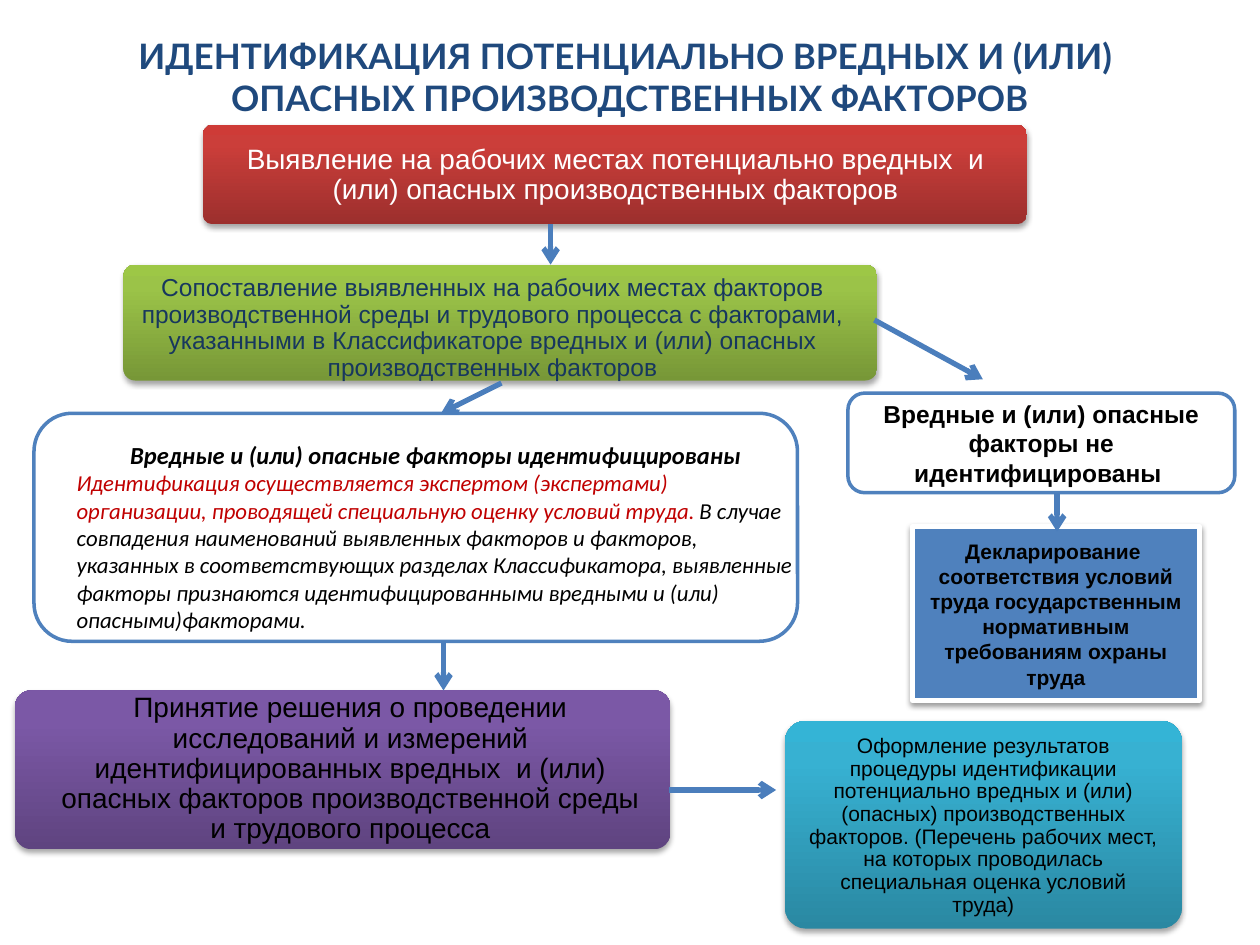
from lxml.etree import SubElement
from pptx import Presentation
from pptx.dml.color import RGBColor
from pptx.enum.shapes import MSO_CONNECTOR, MSO_SHAPE
from pptx.enum.text import MSO_ANCHOR, PP_ALIGN
from pptx.oxml.ns import qn
from pptx.util import Inches, Pt

COLUMNS, ROWS = 100, 75
WIDTH, HEIGHT = Inches(10), Inches(7.5)
BLUE, ARROW_BLUE = "4F81BD", "4B7EBC"
INSET = (1, 0.5, 1, 0.5)

CARDS = [
    {"box": (16.1, 9.9, 65.4, 7.9), "label": (16.9, 10.2, 63.9, 7.4), "inset": 0.7,
     "stops": ("9C2F2D", "CB3E3A", "CE3B37"), "size": 16, "color": "FFFFFF",
     "text": "Выявление на рабочих местах потенциально вредных  и (или) опасных "
             "производственных факторов"},
    {"box": (9.8, 21, 59.8, 9.2), "label": (9.8, 21.8, 58.6, 8.6), "inset": 0.6,
     "stops": ("779737", "9BC348", "9DC746"), "size": 14, "color": "17375E",
     "text": "Сопоставление выявленных на рабочих местах факторов производственной среды "
             "и трудового процесса с факторами, указанными в Классификаторе вредных и "
             "(или) опасных производственных факторов"},
    {"box": (62.3, 57.2, 31.5, 16.5), "label": (63.2, 57.7, 29.7, 15.7), "inset": 1,
     "stops": ("2A88A2", "37B1D2", "34B4D6"), "size": 12, "color": "000000",
     "text": "Оформление результатов процедуры идентификации потенциально вредных и (или) "
             "(опасных) производственных факторов. (Перечень рабочих мест, на которых "
             "проводилась специальная оценка условий труда)"},
    {"box": (1.2, 54.8, 52, 12.6), "label": (3.2, 55.1, 49.2, 11.9), "inset": 0.8,
     "stops": ("5F4480", "7B58A6", "7C57A8"), "size": 16, "color": "000000",
     "text": "Принятие решения о проведении исследований и измерений идентифицированных "
             "вредных  и (или) опасных факторов производственной среды и трудового процесса"},
]

ARROWS = [
    (43.7, 17.8, 43.7, 21),
    (39.8, 30.4, 35, 32.8),
    (69.4, 25.4, 78, 30.1),
    (83.9, 39.1, 83.9, 42.2),
    (35.2, 50.9, 35.2, 54.8),
    (53.1, 62.7, 61.6, 62.7),
]


def rgb(value):
    """Turn a hex string into a colour."""
    return RGBColor.from_string(value)


def place(box):
    """Turn grid columns and rows into slide lengths."""
    steps = (WIDTH / COLUMNS, HEIGHT / ROWS) * 2
    return [round(value * step) for value, step in zip(box, steps)]


def set_frame(shape, inset=INSET, anchor=MSO_ANCHOR.MIDDLE):
    """Set margins, wrapping and anchor, and return the text frame."""
    left, top, right, bottom = place(inset)
    values = {"margin_left": left, "margin_top": top, "margin_right": right,
              "margin_bottom": bottom, "word_wrap": True, "vertical_anchor": anchor}
    for name, value in values.items():
        setattr(shape.text_frame, name, value)
    return shape.text_frame


def add_span(para, text, color, **values):
    """Add formatted text to a paragraph."""
    span = para.add_run()
    span.text = text
    span.font.color.rgb = rgb(color)
    for name, value in values.items():
        setattr(span.font, name, value)


def add_box(shapes, kind, box, fill=None, line=None, width=2):
    """Add a preset shape with a plain fill and outline."""
    shape = shapes.add_shape(kind, *place(box))
    shape.shadow.inherit = False
    if fill:
        shape.fill.solid()
        shape.fill.fore_color.rgb = rgb(fill)
    if line:
        shape.line.color.rgb = rgb(line)
        shape.line.width = Pt(width)
    else:
        shape.line.fill.background()
    return shape


def add_gradient(shape, colors):
    """Fill a shape from bottom to top with three colours."""
    shape.fill.gradient()
    gradient = shape._element.spPr.find(qn("a:gradFill"))
    stops = gradient.find(qn("a:gsLst"))
    for stop in list(stops):
        stops.remove(stop)
    for position, color in zip((0, 80000, 100000), colors):
        stop = SubElement(stops, qn("a:gs"), pos=str(position))
        SubElement(stop, qn("a:srgbClr"), val=color)
    gradient.find(qn("a:lin")).set("ang", "16200000")


def add_shadow(shape, opacity, distance):
    """Drop a soft black shadow below a shape."""
    effects = shape._element.spPr.find(qn("a:effectLst"))
    shadow = SubElement(effects, qn("a:outerShdw"), blurRad=str(Pt(3.1)),
                        dist=str(Pt(distance)), dir="5400000", rotWithShape="0")
    color = SubElement(shadow, qn("a:srgbClr"), val="000000")
    SubElement(color, qn("a:alpha"), val=str(opacity * 1000))


def add_title(page, box):
    """Place the two-line heading."""
    frame = set_frame(page.shapes.add_textbox(*place(box)), (0, 0, 0, 0))
    frame.word_wrap = False
    para = frame.paragraphs[0]
    para.alignment = PP_ALIGN.CENTER
    style = {"name": "Lato", "size": Pt(20), "bold": True}
    add_span(para, "ИДЕНТИФИКАЦИЯ ПОТЕНЦИАЛЬНО ВРЕДНЫХ И (ИЛИ) ", "1F497D", **style)
    para.add_line_break()
    add_span(para, "ОПАСНЫХ ПРОИЗВОДСТВЕННЫХ ФАКТОРОВ", "1F497D", **style)


def add_card(page, box, label, inset, stops, size, color, text):
    """Place a shaded step with its label as one group."""
    group = page.shapes.add_group_shape()
    card = add_box(group.shapes, MSO_SHAPE.ROUNDED_RECTANGLE, box)
    card.adjustments[0] = 0.1
    add_gradient(card, stops)
    add_shadow(card, 35, 1.8)
    frame = set_frame(group.shapes.add_textbox(*place(label)), (inset,) * 4)
    para = frame.paragraphs[0]
    para.alignment = PP_ALIGN.CENTER
    para.line_spacing = 0.9
    add_span(para, text, color, name="Arial", size=Pt(size))


def add_identified(page, box, label):
    """Place the outcome where factors are identified."""
    add_box(page.shapes, MSO_SHAPE.ROUNDED_RECTANGLE, box, "FFFFFF", BLUE)
    frame = set_frame(page.shapes.add_textbox(*place(label)), anchor=MSO_ANCHOR.TOP)
    style = {"name": "Calibri", "italic": True}
    para = frame.paragraphs[0]
    para.alignment = PP_ALIGN.CENTER
    add_span(para, "Вредные и (или) опасные факторы идентифицированы", "000000",
             size=Pt(14), bold=True, **style)
    para = frame.add_paragraph()
    add_span(para, "Идентификация осуществляется экспертом (экспертами) организации, "
             "проводящей специальную оценку условий труда.", "C00000", size=Pt(13), **style)
    add_span(para, " В случае совпадения наименований выявленных факторов и факторов, "
             "указанных в соответствующих разделах Классификатора, выявленные факторы "
             "признаются идентифицированными вредными и (или) опасными)факторами.",
             "000000", size=Pt(13), **style)


def add_bold_box(page, kind, box, fill, line, width, size, text):
    """Place a box with bold centred text and return it."""
    shape = add_box(page.shapes, kind, box, fill, line, width)
    para = set_frame(shape).paragraphs[0]
    para.alignment = PP_ALIGN.CENTER
    add_span(para, text, "000000", name="Arial", size=Pt(size), bold=True)
    return shape


def add_unidentified(page, outcome, declaration):
    """Place the outcome where no factors are identified and its declaration."""
    add_bold_box(page, MSO_SHAPE.ROUNDED_RECTANGLE, outcome, "FFFFFF", BLUE, 2, 14,
                 "Вредные и (или) опасные факторы не идентифицированы ")
    shape = add_bold_box(page, MSO_SHAPE.RECTANGLE, declaration, BLUE, "FFFFFF", 3, 12,
                         "Декларирование  соответствия условий труда государственным "
                         "нормативным требованиям охраны труда")
    add_shadow(shape, 38, 1.6)


def add_arrow(page, ends):
    """Draw an arrow between two grid points."""
    arrow = page.shapes.add_connector(MSO_CONNECTOR.STRAIGHT, *place(ends))
    arrow.line.color.rgb = rgb(ARROW_BLUE)
    arrow.line.width = Pt(3)
    SubElement(arrow.line._get_or_add_ln(), qn("a:tailEnd"), type="arrow")
    SubElement(arrow._element.spPr, qn("a:effectLst"))


def main():
    """Build and save the deck."""
    deck = Presentation()
    deck.slide_width, deck.slide_height = WIDTH, HEIGHT
    page = deck.slides.add_slide(deck.slide_layouts[6])
    add_title(page, (5, 3, 90, 6.1))
    for card in CARDS:
        add_card(page, **card)
    add_identified(page, (2.7, 32.8, 60.6, 18.1), (5.1, 34.4, 59, 18.8))
    add_unidentified(page, (67.3, 31.2, 30.7, 7.9), (72.4, 41.8, 22.8, 13.8))
    for ends in ARROWS:
        add_arrow(page, ends)
    deck.save("out.pptx")


if __name__ == "__main__":
    main()
